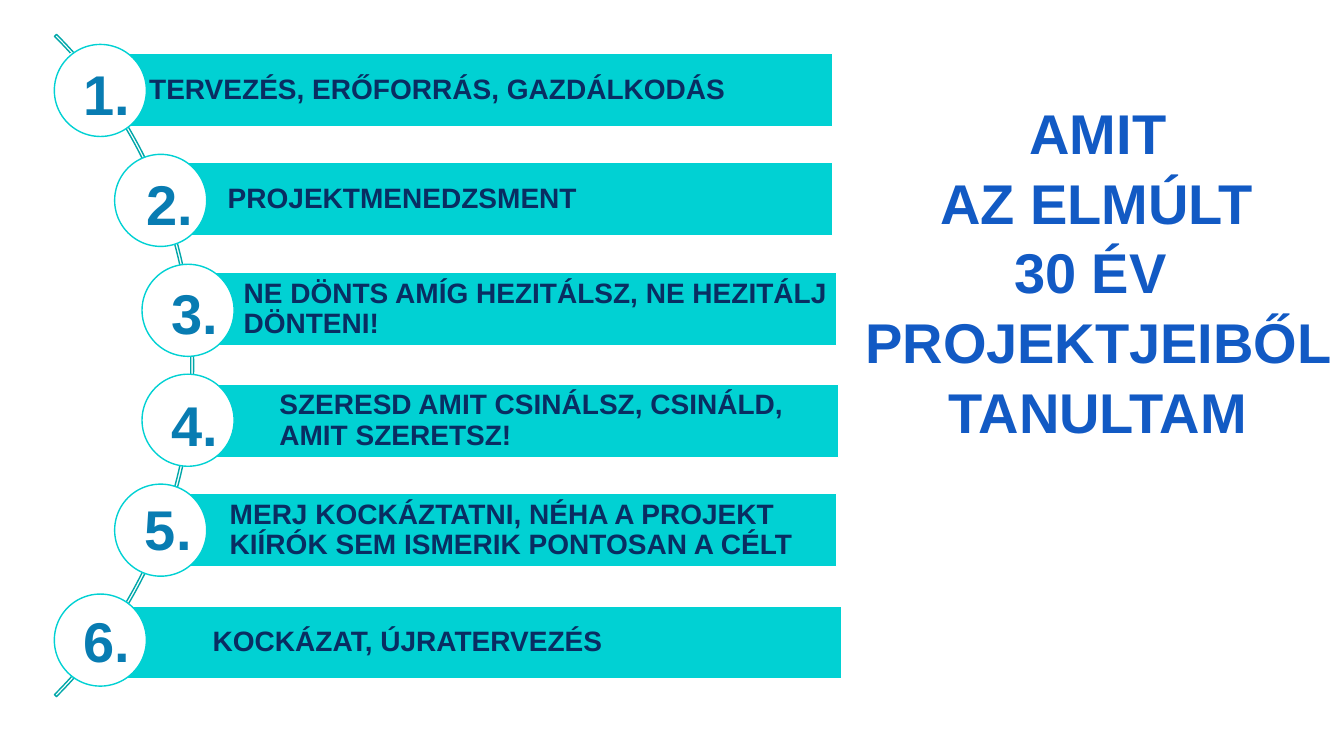
from pptx import Presentation
from pptx.dml.color import RGBColor
from pptx.enum.shapes import MSO_SHAPE
from pptx.enum.text import MSO_ANCHOR, MSO_AUTO_SIZE, PP_ALIGN
from pptx.util import Cm, Pt

TITLE = ["AMIT", " AZ ELMÚLT ", "30 ÉV ", "PROJEKTJEIBŐL TANULTAM"]
LESSONS = [
    dict(text="TERVEZÉS, ERŐFORRÁS, GAZDÁLKODÁS", bar=(1.78, 1.35, 19.2),
         circle=1.37, number=(1.6, 1.24), margin=1.02, indent=-0.51),
    dict(text="PROJEKTMENEDZSMENT", bar=(4.27, 4.1, 16.71),
         circle=2.89, number=(3.18, 4.01)),
    dict(text="NE DÖNTS AMÍG HEZITÁLSZ, NE HEZITÁLJ DÖNTENI!", bar=(4.67, 6.87, 16.41),
         circle=3.58, number=(3.81, 6.76)),
    dict(text="SZERESD AMIT CSINÁLSZ, CSINÁLD, AMIT SZERETSZ!", bar=(4.55, 9.69, 16.59),
         circle=3.58, number=(3.81, 9.58), margin=1.02),
    dict(text="MERJ KOCKÁZTATNI, NÉHA A PROJEKT KIÍRÓK SEM ISMERIK PONTOSAN A CÉLT",
         bar=(4.32, 12.44, 16.76), circle=2.89, number=(3.15, 12.22)),
    dict(text="KOCKÁZAT, ÚJRATERVEZÉS", bar=(2.87, 15.27, 18.34),
         circle=1.37, number=(1.6, 15.04), margin=1.02),
]
BAR_HEIGHT = 1.84
CIRCLE_TOP, CIRCLE_STEP, CIRCLE_SIZE = 1.12, 2.77, 2.32
TURQUOISE, TEAL, WHITE = "01D1D3", "01A7A9", "FFFFFF"
NAVY, BLUE, ROYAL = "092D62", "087CB2", "125AC4"


def rgb(value):
    return RGBColor.from_string(value)


def write(sp, *lines, size=40, color=BLUE, align=PP_ALIGN.CENTER, anchor=MSO_ANCHOR.TOP,
          insets=(0.25, 0.25, 0.25, 0.13), spacing=1.0, margin=0, indent=0):
    tf = sp.text_frame
    tf.word_wrap = True
    tf.auto_size = MSO_AUTO_SIZE.NONE
    tf.vertical_anchor = anchor
    tf.margin_left, tf.margin_top, tf.margin_right, tf.margin_bottom = map(Cm, insets)
    for i, line in enumerate(lines):
        p = tf.add_paragraph() if i else tf.paragraphs[0]
        pPr = p._p.get_or_add_pPr()
        pPr.set("marL", str(Cm(margin)))
        pPr.set("indent", str(Cm(indent)))
        p.alignment = align
        p.line_spacing = spacing
        r = p.add_run()
        r.text = line
        r.font.name = "Arial"
        r.font.size = Pt(size)
        r.font.bold = True
        r.font.color.rgb = rgb(color)


def add_shape(s, kind, box, line, fill=None):
    sp = s.shapes.add_shape(kind, *map(Cm, box))
    sp.shadow.inherit = False
    if fill:
        sp.fill.solid()
        sp.fill.fore_color.rgb = rgb(fill)
    else:
        sp.fill.background()
    sp.line.color.rgb = rgb(line)
    sp.line.width = Pt(1)
    return sp


def main():
    prs = Presentation()
    prs.slide_width, prs.slide_height = Cm(33.87), Cm(19.05)
    s = prs.slides.add_slide(prs.slide_layouts[5])

    title = s.shapes.title
    title.left, title.top, title.width, title.height = map(Cm, (21.18, 2.21, 12.98, 8.81))
    write(title, *TITLE, color=ROYAL, insets=(0.25, 0.2, 0.25, 0.13), spacing=1.04)

    arc = add_shape(s, MSO_SHAPE.BLOCK_ARC, (-18.72, -2.59, 23.6, 23.6), TEAL)
    for i, value in enumerate((189, 27, 0.003)):
        arc.adjustments[i] = value

    for i, lesson in enumerate(LESSONS):
        bar = add_shape(s, MSO_SHAPE.RECTANGLE, (*lesson["bar"], BAR_HEIGHT), WHITE, TURQUOISE)
        write(bar, lesson["text"], size=20, color=NAVY, align=PP_ALIGN.LEFT,
              anchor=MSO_ANCHOR.MIDDLE, insets=(1.47, 0.15, 0.15, 0.15), spacing=0.9,
              margin=lesson.get("margin", 0), indent=lesson.get("indent", 0))
        top = CIRCLE_TOP + i * CIRCLE_STEP
        add_shape(s, MSO_SHAPE.OVAL, (lesson["circle"], top, CIRCLE_SIZE, CIRCLE_SIZE),
                  TURQUOISE, WHITE)
        number = s.shapes.add_textbox(*map(Cm, (*lesson["number"], 2.18, 1.96)))
        write(number, f"{i + 1}.")

    prs.save("out.pptx")


if __name__ == "__main__":
    main()
